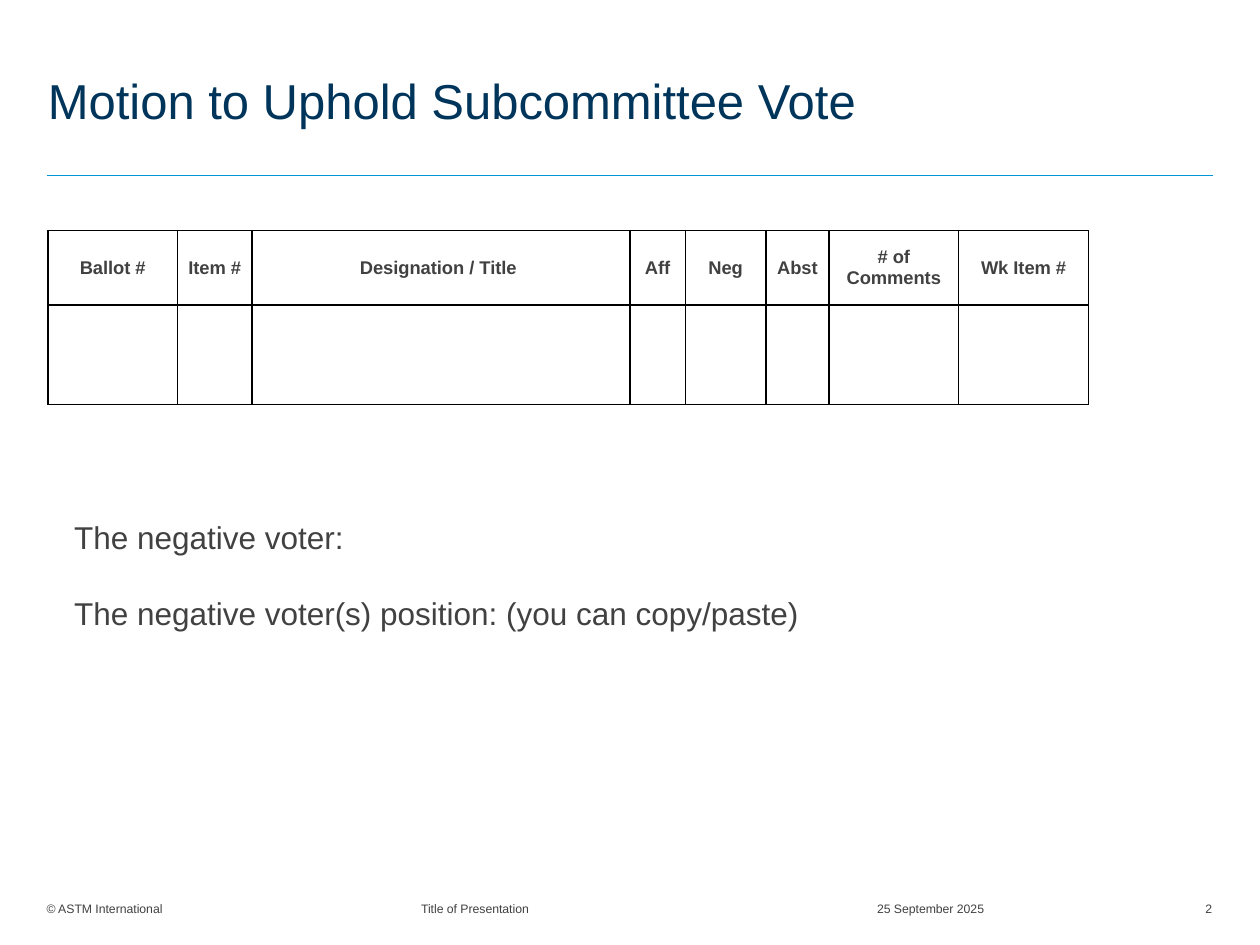
from lxml.etree import SubElement
from pptx import Presentation
from pptx.dml.color import RGBColor
from pptx.enum.shapes import MSO_CONNECTOR as Connector
from pptx.enum.text import MSO_ANCHOR as Anchor, MSO_AUTO_SIZE as AutoSize, PP_ALIGN as Align
from pptx.oxml import parse_xml
from pptx.oxml.ns import nsdecls, qn
from pptx.util import Inches, Pt

FONT = "Arial"
NAVY, GREY, BLUE, WHITE, BLACK = "00355B", "414141", "0095D6", "FFFFFF", "000000"
TITLE = "Motion to Uphold Subcommittee Vote"
COLUMNS = [
    ("Ballot #", 1.03), ("Item #", 0.59), ("Designation / Title ", 3), ("Aff", 0.44),
    ("Neg", 0.64), ("Abst", 0.5), ("# of Comments", 1.03), ("Wk Item #", 1.03),
]
ROW_HEIGHTS = [0.59, 0.79]
VOTER_LINES = ["The negative voter:", "The negative voter(s) position: (you can copy/paste)"]
FOOTERS = [
    ("© ASTM International", 0.37, 1.13, Align.LEFT),
    ("25 September 2025", 6.79, 1.19, Align.CENTER),
    ("Title of Presentation", 2.05, 3.44, Align.CENTER),
    ("2", 9.13, 0.49, Align.RIGHT),
]


def color(value):
    return RGBColor.from_string(value)


def style(paragraph, size, value, align=Align.LEFT, bold=False):
    paragraph.alignment = align
    font = paragraph.font
    font.name, font.size, font.bold = FONT, Pt(size), bold
    font.color.rgb = color(value)


def set_frame(frame, anchor, margins=(0, 0, 0, 0)):
    frame.word_wrap = True
    frame.auto_size = AutoSize.NONE
    frame.vertical_anchor = anchor
    frame.margin_left, frame.margin_top, frame.margin_right, frame.margin_bottom = map(Inches, margins)


def add_title(slide):
    title = slide.shapes.title
    title.left, title.top, title.width, title.height = map(Inches, (0.38, 0.35, 7.71, 0.94))
    set_frame(title.text_frame, Anchor.MIDDLE)
    title.text_frame.text = TITLE
    paragraph = title.text_frame.paragraphs[0]
    style(paragraph, 28, NAVY)
    paragraph.line_spacing = Pt(30)


def add_text(slide, box, lines, size, align, anchor, margins=(0, 0, 0, 0), gap=0):
    frame = slide.shapes.add_textbox(*map(Inches, box)).text_frame
    set_frame(frame, anchor, margins)
    for index, line in enumerate(lines):
        paragraph = frame.add_paragraph() if index else frame.paragraphs[0]
        paragraph.text = line
        style(paragraph, size, GREY, align)
        if index:
            paragraph.space_before = Pt(gap)


def add_rule(slide):
    ends = map(Inches, (0.37, 1.39, 9.63, 1.39))
    rule = slide.shapes.add_connector(Connector.STRAIGHT, *ends)
    rule.line.color.rgb = color(BLUE)
    rule.line.width = Pt(0.5)
    SubElement(rule._element.spPr, qn("a:effectLst"))


def add_borders(cell):
    properties = cell._tc.get_or_add_tcPr()
    for index, side in enumerate("LRTB"):
        properties.insert(index, parse_xml(
            f'<a:ln{side} {nsdecls("a")} w="{Pt(1)}"><a:solidFill>'
            f'<a:srgbClr val="{BLACK}"/></a:solidFill></a:ln{side}>'))


def add_ballot_table(slide):
    widths = [width for _, width in COLUMNS]
    box = map(Inches, (0.38, 1.83, sum(widths), sum(ROW_HEIGHTS)))
    table = slide.shapes.add_table(len(ROW_HEIGHTS), len(COLUMNS), *box).table
    for column, width in zip(table.columns, widths):
        column.width = Inches(width)
    for row, height in zip(table.rows, ROW_HEIGHTS):
        row.height = Inches(height)
    for cell in table.iter_cells():
        cell.fill.solid()
        cell.fill.fore_color.rgb = color(WHITE)
        cell.vertical_anchor = Anchor.MIDDLE
        cell.margin_left = cell.margin_right = Inches(0.06)
        cell.margin_top = cell.margin_bottom = 0
        add_borders(cell)
    for cell, (heading, _) in zip(table.rows[0].cells, COLUMNS):
        cell.text = heading
        style(cell.text_frame.paragraphs[0], 10.5, GREY, Align.CENTER, True)


def main():
    """Build the slide for a motion to uphold a subcommittee vote."""
    presentation = Presentation()
    presentation.slide_width, presentation.slide_height = Inches(10), Inches(7.5)
    slide = presentation.slides.add_slide(presentation.slide_layouts[5])
    add_title(slide)
    add_rule(slide)
    add_ballot_table(slide)
    add_text(slide, (0.49, 4.06, 7.07, 1.01), VOTER_LINES, 18, Align.LEFT, Anchor.TOP,
             (0.1, 0.05, 0.1, 0.05), gap=22)
    for text, left, width, align in FOOTERS:
        add_text(slide, (left, 7.15, width, 0.13), [text], 7, align, Anchor.MIDDLE)
    presentation.save("out.pptx")


if __name__ == "__main__":
    main()
